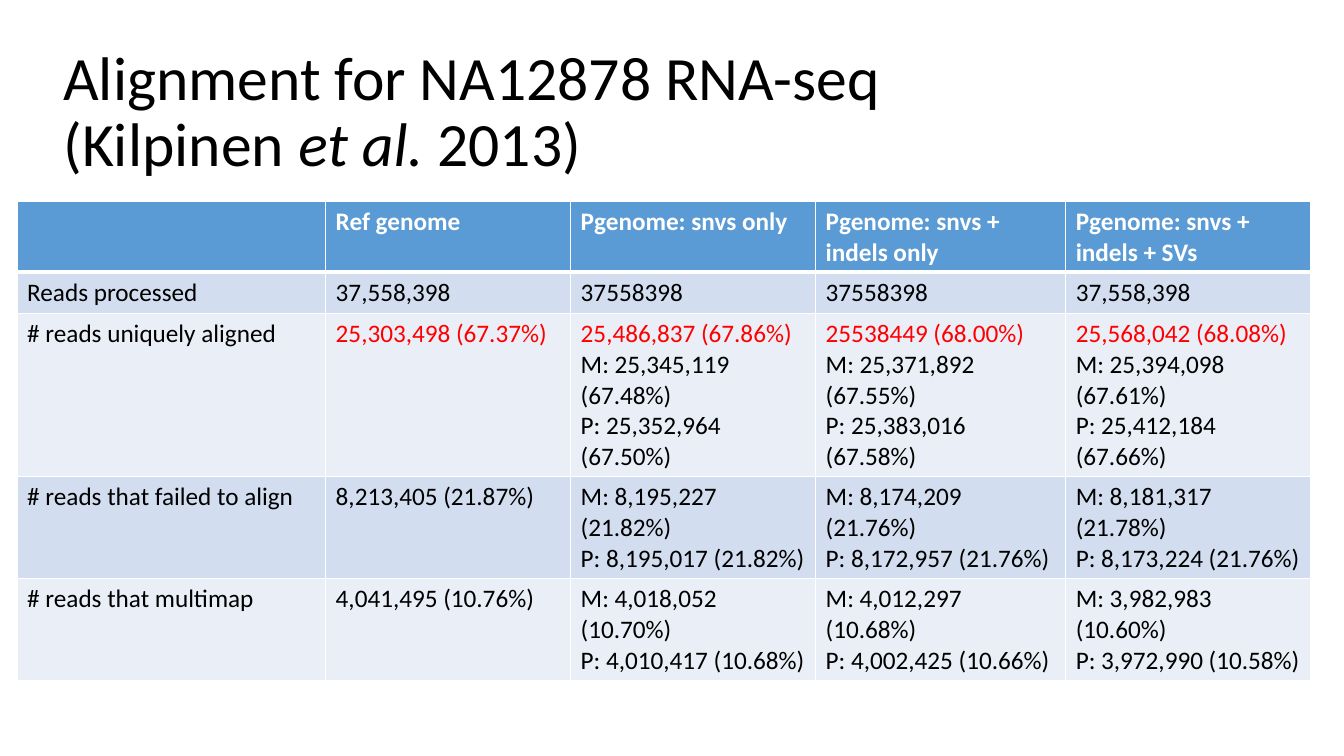
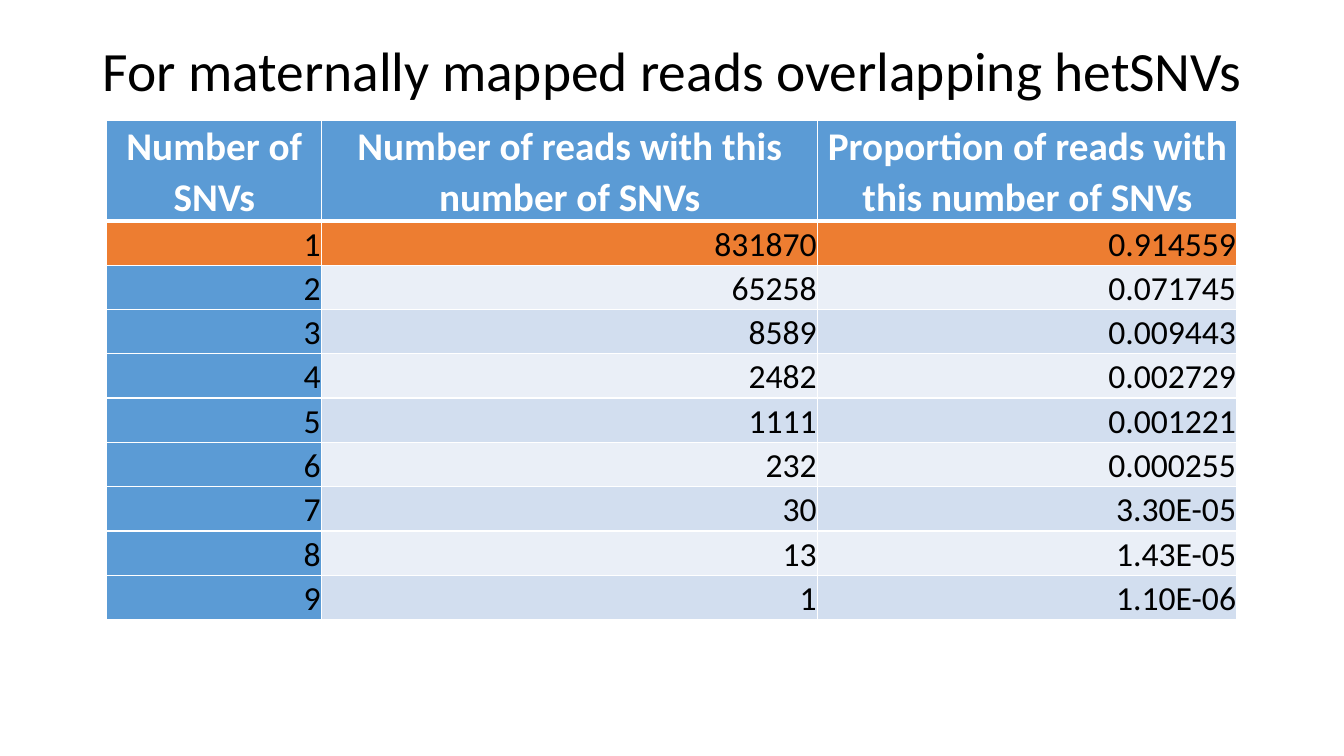
from dataclasses import dataclass

from lxml.etree import SubElement
from pptx import Presentation
from pptx.dml.color import RGBColor as RGB
from pptx.enum.text import MSO_ANCHOR as ANCHOR, PP_ALIGN as ALIGN
from pptx.oxml.ns import qn
from pptx.util import Pt

PX = 9144


def px(n):
    return n * PX


@dataclass(frozen=True)
class Theme:
    font: str = "Calibri"
    text: str = "000000"
    white: str = "FFFFFF"
    header: str = "5B9BD5"
    bands: tuple = ("D2DEEF", "EAEFF7")
    focus: str = "ED7D31"
    alert: str = "FF0000"
    title: float = 44
    title_small: float = 39.6
    head: float = 28
    value: float = 24
    body: float = 18
    thin: float = 1
    thick: float = 3


T = Theme()


class Deck:
    def __init__(self, width, height):
        self.prs = Presentation()
        self.prs.slide_width, self.prs.slide_height = px(width), px(height)
        self.s = None

    def slide(self):
        self.s = self.prs.slides.add_slide(self.prs.slide_layouts[6])

    def run(self, p, text, size, color=T.text, **fmt):
        r = p.add_run()
        r.text = text
        for name, value in {"name": T.font, "size": Pt(size), **fmt}.items():
            setattr(r.font, name, value)
        r.font.color.rgb = RGB.from_string(color)

    def title(self, box, lines, size, align=ALIGN.LEFT):
        tf = self.s.shapes.add_textbox(*map(px, box)).text_frame
        tf.word_wrap, tf.vertical_anchor = True, ANCHOR.MIDDLE
        p = tf.paragraphs[0]
        p.alignment, p.line_spacing = align, 0.9
        for i, line in enumerate(lines):
            if i:
                p.add_line_break()
            for text, italic in line:
                self.run(p, text, size, italic=italic)

    def border(self, cell, side, width):
        ln = SubElement(cell._tc.get_or_add_tcPr(), qn(f"a:ln{side}"), w=str(Pt(width)))
        SubElement(SubElement(ln, qn("a:solidFill")), qn("a:srgbClr"), val=T.white)

    def cell(self, cell, text, row, fill, size, color, align=ALIGN.LEFT, spacing=None, **layout):
        edges = {"T": row == 1, "B": row == 0}
        for side in "LRTB":
            self.border(cell, side, T.thick if edges.get(side) else T.thin)
        cell.fill.solid()
        cell.fill.fore_color.rgb = RGB.from_string(fill)
        for name, value in layout.items():
            setattr(cell, name, value)
        tf = cell.text_frame
        for i, line in enumerate(text.split("\n")):
            p = tf.add_paragraph() if i else tf.paragraphs[0]
            p.alignment = align
            if spacing:
                p.line_spacing = spacing
            if line:
                self.run(p, line, size, color(row, i, line), bold=row == 0)

    def table(self, left, top, widths, heights, rows, style):
        box = map(px, (left, top, sum(widths), sum(heights)))
        table = self.s.shapes.add_table(len(rows), len(widths), *box).table
        for column, width in zip(table.columns, widths):
            column.width = px(width)
        for row, height in zip(table.rows, heights):
            row.height = px(height)
        for i, row in enumerate(rows):
            for j, text in enumerate(row):
                self.cell(table.cell(i, j), text, i, **style(i, j))


def band(row):
    return T.bands[(row - 1) % 2] if row else T.header


def alignment_color(row, line, text):
    if row == 0:
        return T.white
    return T.alert if row == 2 and line == 0 and text.endswith(")") else T.text


def alignment_style(row, col):
    return {"fill": band(row), "size": T.body, "color": alignment_color}


def snv_style(row, col):
    if row == 0:
        return {"fill": T.header, "size": T.head, "color": lambda *_: T.white,
                "align": ALIGN.CENTER, "spacing": 1.07,
                "vertical_anchor": ANCHOR.BOTTOM if col else ANCHOR.MIDDLE,
                "margin_left": px(7), "margin_right": px(7),
                "margin_top": 0, "margin_bottom": 0}
    fill = T.focus if row == 1 else band(row) if col else T.header
    return {"fill": fill, "size": T.value, "color": lambda *_: T.text,
            "align": ALIGN.RIGHT, "vertical_anchor": ANCHOR.BOTTOM,
            "margin_left": px(1), "margin_right": px(1),
            "margin_top": px(1), "margin_bottom": 0}


ALIGNMENT = [
    ["", "Ref genome", "Pgenome: snvs only", "Pgenome: snvs + indels only",
     "Pgenome: snvs + indels + SVs"],
    ["Reads processed", "37,558,398", "37558398", "37558398", "37,558,398"],
    ["# reads uniquely aligned", "25,303,498 (67.37%)",
     "25,486,837 (67.86%)\nM: 25,345,119 (67.48%)\nP: 25,352,964 (67.50%)",
     "25538449 (68.00%)\nM: 25,371,892 (67.55%)\nP: 25,383,016 (67.58%)",
     "25,568,042 (68.08%)\nM: 25,394,098 (67.61%)\nP: 25,412,184 (67.66%)"],
    ["# reads that failed to align", "8,213,405 (21.87%)",
     "M: 8,195,227 (21.82%)\nP: 8,195,017 (21.82%)",
     "M: 8,174,209 (21.76%)\nP: 8,172,957 (21.76%)",
     "M: 8,181,317 (21.78%)\nP: 8,173,224 (21.76%)"],
    ["# reads that multimap", "4,041,495 (10.76%)",
     "M: 4,018,052 (10.70%)\nP: 4,010,417 (10.68%)",
     "M: 4,012,297 (10.68%)\nP: 4,002,425 (10.66%)",
     "M: 3,982,983 (10.60%)\nP: 3,972,990 (10.58%)"],
]

SNV_HEAD = ["Number of SNVs", "Number of reads with this number of SNVs",
            "Proportion of reads with this number of SNVs"]
SNV_READS = [
    ("831870", "0.914559"), ("65258", "0.071745"), ("8589", "0.009443"),
    ("2482", "0.002729"), ("1111", "0.001221"), ("232", "0.000255"),
    ("30", "3.30E-05"), ("13", "1.43E-05"), ("1", "1.10E-06"),
]


def main():
    deck = Deck(1333, 750)

    deck.slide()
    deck.title((53, 40, 1221, 145), [
        [("Alignment for NA12878 RNA-seq ", False)],
        [("(Kilpinen ", False), ("et al. ", True), ("2013)", False)],
    ], T.title)
    deck.table(17, 200, [306, 243, 243, 248, 243], [70, 41, 162, 101, 101],
               ALIGNMENT, alignment_style)

    deck.slide()
    deck.title((22, 40, 1290, 66),
               [[("For maternally mapped reads overlapping hetSNVs", False)]],
               T.title_small, ALIGN.CENTER)
    counts = [[str(n), *reads] for n, reads in enumerate(SNV_READS, 1)]
    deck.table(106, 119, [213, 492, 416], [100] + [44] * len(counts),
               [SNV_HEAD] + counts, snv_style)

    deck.prs.save("out.pptx")


if __name__ == "__main__":
    main()
